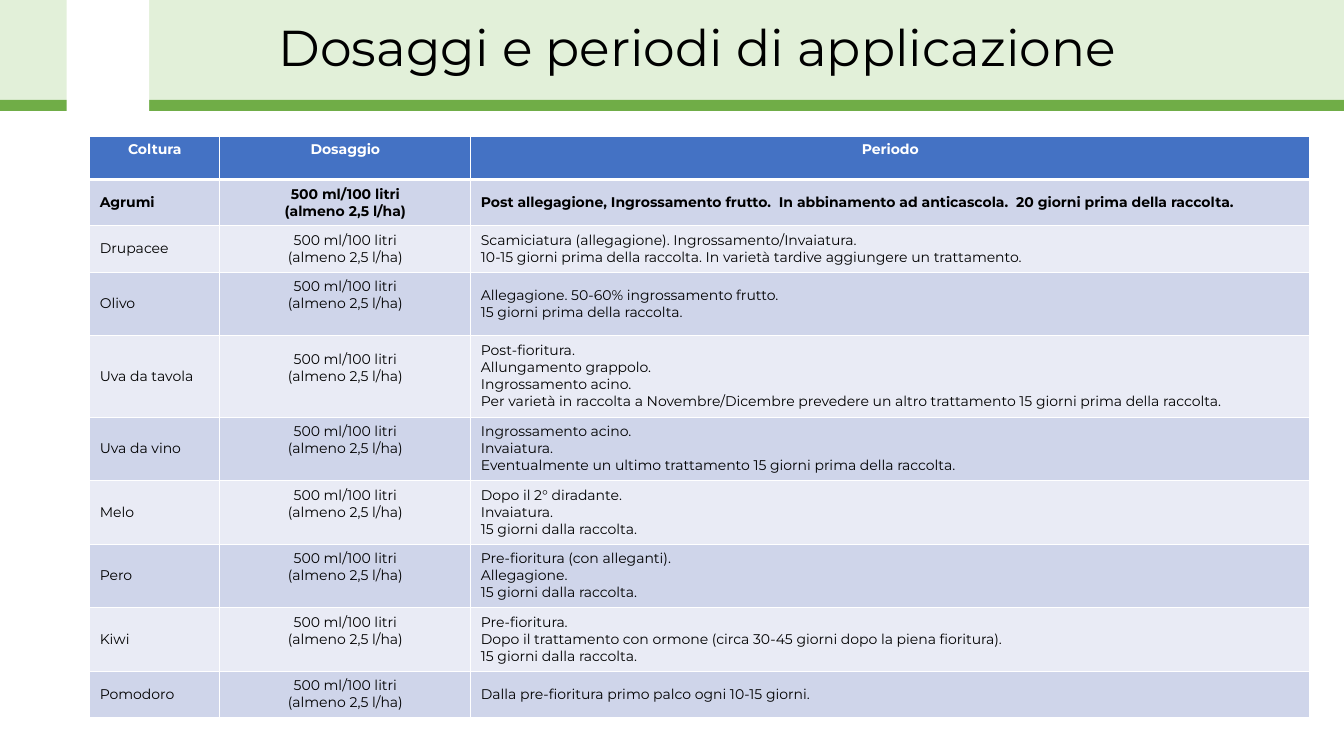
from lxml.etree import SubElement
from pptx import Presentation
from pptx.dml.color import RGBColor
from pptx.enum.shapes import MSO_SHAPE
from pptx.enum.text import MSO_ANCHOR, PP_ALIGN
from pptx.oxml.ns import qn
from pptx.util import Inches, Pt

FONT = "Montserrat"
BLACK = RGBColor(0x00, 0x00, 0x00)
WHITE = RGBColor(0xFF, 0xFF, 0xFF)
PALE_GREEN = RGBColor(0xE2, 0xF0, 0xD9)
GREEN = RGBColor(0x70, 0xAD, 0x47)
HEADER_BLUE = RGBColor(0x44, 0x72, 0xC4)
ROW_FILLS = (RGBColor(0xCF, 0xD5, 0xEA), RGBColor(0xE9, 0xEB, 0xF5))

TITLE = "Dosaggi e periodi di applicazione"
HEADINGS = ("Coltura", "Dosaggio", "Periodo")
DOSAGE = ("500 ml/100 litri", "(almeno 2,5 l/ha)")
# Crop, row height, application periods
CROPS = [
    ("Agrumi", 0.46, [
        "Post allegagione, Ingrossamento frutto.  In abbinamento ad anticascola.  "
        "20 giorni prima della raccolta."]),
    ("Drupacee", 0.46, [
        "Scamiciatura (allegagione). Ingrossamento/Invaiatura.",
        "10-15 giorni prima della raccolta. In varietà tardive aggiungere un trattamento."]),
    ("Olivo", 0.63, [
        "Allegagione. 50-60% ingrossamento frutto.",
        "15 giorni prima della raccolta."]),
    ("Uva da tavola", 0.81, [
        "Post-fioritura.",
        "Allungamento grappolo.",
        "Ingrossamento acino.",
        "Per varietà in raccolta a Novembre/Dicembre prevedere un altro trattamento "
        "15 giorni prima della raccolta."]),
    ("Uva da vino", 0.63, [
        "Ingrossamento acino.",
        "Invaiatura.",
        "Eventualmente un ultimo trattamento 15 giorni prima della raccolta."]),
    ("Melo", 0.63, [
        "Dopo il 2° diradante.",
        "Invaiatura.",
        "15 giorni dalla raccolta."]),
    ("Pero", 0.63, [
        "Pre-fioritura (con alleganti).",
        "Allegagione.",
        "15 giorni dalla raccolta."]),
    ("Kiwi", 0.63, [
        "Pre-fioritura.",
        "Dopo il trattamento con ormone (circa 30-45 giorni dopo la piena fioritura).",
        "15 giorni dalla raccolta."]),
    ("Pomodoro", 0.46, ["Dalla pre-fioritura primo palco ogni 10-15 giorni."]),
]

# Left, top, width, height, fill
BANDS = [
    (0, 0, 13.33, 0.99, PALE_GREEN),
    (0, 0.99, 13.33, 0.11, GREEN),
    (0.66, 0, 0.82, 1.1, WHITE),
]
COLUMN_WIDTHS = (1.29, 2.49, 8.32)
HEADER_HEIGHT = 0.43
COMPACT_HEIGHT = 0.46
RAISED_DOSAGE_MARGIN = 0.22


def write(frame, lines, size=10, color=BLACK, bold=False, align=PP_ALIGN.LEFT, spacing=None):
    for index, line in enumerate(lines):
        paragraph = frame.add_paragraph() if index else frame.paragraphs[0]
        paragraph.alignment = align
        if spacing:
            paragraph.line_spacing = spacing
        run = paragraph.add_run()
        run.text = line
        run.font.name = FONT
        run.font.size = Pt(size)
        run.font.bold = bold
        run.font.color.rgb = color


def set_borders(cell, top=1, bottom=1):
    """Draw white cell borders, with widths in points."""
    properties = cell._tc.get_or_add_tcPr()
    for side, width in (("lnL", 1), ("lnR", 1), ("lnT", top), ("lnB", bottom)):
        line = SubElement(properties, qn(f"a:{side}"), w=str(Pt(width)))
        fill = SubElement(line, qn("a:solidFill"))
        SubElement(fill, qn("a:srgbClr"), val=str(WHITE))


def paint(cell, fill):
    cell.fill.solid()
    cell.fill.fore_color.rgb = fill


def add_bands(slide):
    for left, top, width, height, fill in BANDS:
        band = slide.shapes.add_shape(
            MSO_SHAPE.RECTANGLE, Inches(left), Inches(top), Inches(width), Inches(height))
        band.shadow.inherit = False
        band.fill.solid()
        band.fill.fore_color.rgb = fill
        band.line.fill.background()


def add_title(slide):
    title = slide.shapes.add_textbox(Inches(1.67), Inches(0.1), Inches(10.49), Inches(0.79))
    title.text_frame.word_wrap = True
    title.text_frame.vertical_anchor = MSO_ANCHOR.MIDDLE
    write(title.text_frame, [TITLE], size=36, align=PP_ALIGN.CENTER, spacing=0.9)


def add_dosage_table(slide):
    heights = [HEADER_HEIGHT] + [height for _, height, _ in CROPS]
    table = slide.shapes.add_table(
        len(heights), len(COLUMN_WIDTHS), Inches(0.89), Inches(1.35),
        Inches(sum(COLUMN_WIDTHS)), Inches(sum(heights))).table
    for column, width in zip(table.columns, COLUMN_WIDTHS):
        column.width = Inches(width)
    for row, height in zip(table.rows, heights):
        row.height = Inches(height)

    for column, heading in enumerate(HEADINGS):
        cell = table.cell(0, column)
        set_borders(cell, bottom=3)
        paint(cell, HEADER_BLUE)
        write(cell.text_frame, [heading], color=WHITE, bold=True, align=PP_ALIGN.CENTER)

    for row, (crop, height, periods) in enumerate(CROPS, start=1):
        first = row == 1
        for column, lines in enumerate(([crop], DOSAGE, periods)):
            cell = table.cell(row, column)
            set_borders(cell, top=3 if first else 1)
            paint(cell, ROW_FILLS[(row - 1) % 2])
            cell.vertical_anchor = MSO_ANCHOR.MIDDLE
            is_dosage = lines is DOSAGE
            if is_dosage and height > COMPACT_HEIGHT:
                cell.margin_bottom = Inches(RAISED_DOSAGE_MARGIN)
            write(cell.text_frame, lines, bold=first,
                  align=PP_ALIGN.CENTER if is_dosage else PP_ALIGN.LEFT)


def main():
    presentation = Presentation()
    presentation.slide_width = Inches(13.33)
    presentation.slide_height = Inches(7.5)
    slide = presentation.slides.add_slide(presentation.slide_layouts[6])
    add_bands(slide)
    add_title(slide)
    add_dosage_table(slide)
    presentation.save("out.pptx")


if __name__ == "__main__":
    main()
